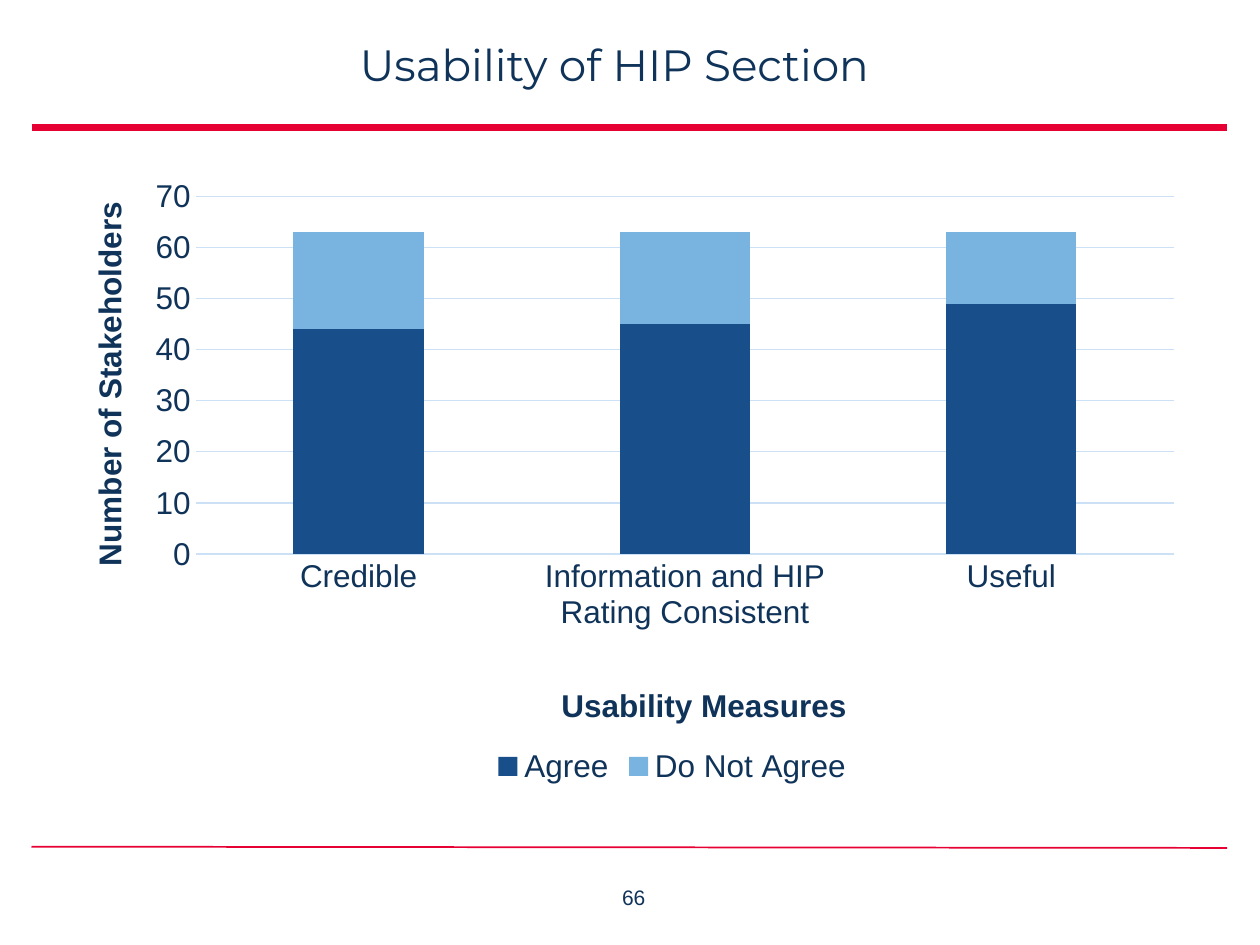
"""Build the slide on the usability of the HIP section with its stacked column chart."""
from lxml import etree
from pptx import Presentation
from pptx import util as u
from pptx.chart.data import CategoryChartData
from pptx.dml.color import RGBColor
from pptx.enum import chart as kinds, shapes, text
from pptx.oxml.ns import qn

COLOURS = {"ink": "10335A", "rule": "E70033", "grid": "CCE0F6",
           "Agree": "184E8A", "Do Not Agree": "79B4E1"}


def write(frame, words, font="Arial", size=18, bold=False):
    line = frame.paragraphs[0]
    line.alignment = text.PP_ALIGN.CENTER
    run = line.add_run()
    run.text = words
    run.font.name, run.font.size, run.font.bold = font, u.Pt(size), bold
    run.font.color.rgb = RGBColor.from_string(COLOURS["ink"])


def place(element, index, **shares):
    for old in element.findall(qn("c:layout")):
        element.remove(old)
    layout = etree.Element(qn("c:layout"))
    element.insert(index, layout)
    manual = etree.SubElement(layout, qn("c:manualLayout"))
    if "w" in shares:
        etree.SubElement(manual, qn("c:layoutTarget"), val="inner")
    for mode in ("xMode", "yMode"):
        etree.SubElement(manual, qn(f"c:{mode}"), val="edge")
    for name, share in shares.items():
        etree.SubElement(manual, qn(f"c:{name}"), val=str(share))


deck = Presentation()
deck.slide_width, deck.slide_height = u.Inches(10), u.Inches(7.5)
across, down = deck.slide_width / 100, deck.slide_height / 100
slide = deck.slides.add_slide(deck.slide_layouts[5])

heading = slide.shapes.title
heading.left, heading.top = int(2.5 * across), int(4 * down)
heading.width, heading.height = int(92.5 * across), int(9.47 * down)
frame = heading.text_frame
frame.margin_left = frame.margin_right = frame.margin_top = frame.margin_bottom = 0
frame.vertical_anchor = text.MSO_ANCHOR.TOP
write(frame, "Usability of HIP Section", font="Montserrat", size=25)

for start, end, weight in ((13.47, 13.47, 4), (89.6, 89.73, 1)):
    rule = slide.shapes.add_connector(
        shapes.MSO_CONNECTOR.STRAIGHT, int(2.5 * across), int(start * down),
        int(97.4 * across), int(end * down))
    rule.line.color.rgb = RGBColor.from_string(COLOURS["rule"])
    rule.line.width = u.Pt(weight)
    etree.SubElement(rule.line._get_or_add_ln().getparent(), qn("a:effectLst"))

page = slide.shapes.add_textbox(int(45.3 * across), int(92.93 * down),
                                int(10 * across), int(5 * down))
page.text_frame.word_wrap = False
write(page.text_frame, "66", size=12)

answers = CategoryChartData()
answers.categories = ["Credible", "Information and HIP Rating Consistent", "Useful"]
answers.add_series("Agree", [44, 45, 49])
answers.add_series("Do Not Agree", [19, 18, 14])
usability = slide.shapes.add_chart(
    kinds.XL_CHART_TYPE.COLUMN_STACKED, int(5.7 * across), int(17.47 * down),
    int(89.3 * across), int(66.4 * down), answers).chart
usability.has_title = False
usability.font.name, usability.font.size = "Arial", u.Pt(18)
usability.font.color.rgb = RGBColor.from_string(COLOURS["ink"])

columns = usability.plots[0]
columns.gap_width, columns.overlap = 150, 100
columns.vary_by_categories = False
for series in columns.series:
    series.format.fill.solid()
    series.format.fill.fore_color.rgb = RGBColor.from_string(COLOURS[series.name])

measures, stakeholders = usability.category_axis, usability.value_axis
for axis, words, x, y in ((measures, "Usability Measures", 0.43, 0.82),
                          (stakeholders, "Number of Stakeholders", 0.01, 0.05)):
    axis.major_tick_mark = axis.minor_tick_mark = kinds.XL_TICK_MARK.NONE
    write(axis.axis_title.text_frame, words, bold=True)
    place(axis.axis_title._element, 1, x=x, y=y)
stakeholders.axis_title._element.find(".//" + qn("a:bodyPr")).set("rot", "-5400000")
stakeholders.minimum_scale, stakeholders.maximum_scale = 0, 70
stakeholders.major_unit = 10
stakeholders.format.line.fill.background()
for line in (measures.format.line, stakeholders.major_gridlines.format.line):
    line.color.rgb = RGBColor.from_string(COLOURS["grid"])
    line.width = u.Pt(0.75)

usability.has_legend = True
usability.legend.position = kinds.XL_LEGEND_POSITION.BOTTOM
usability.legend.include_in_layout = False
place(usability.legend._element, 1, x=0.37, y=0.92)
place(usability._chartSpace.chart.plotArea, 0, x=0.11, y=0.05, w=0.87, h=0.57)

deck.save("out.pptx")
